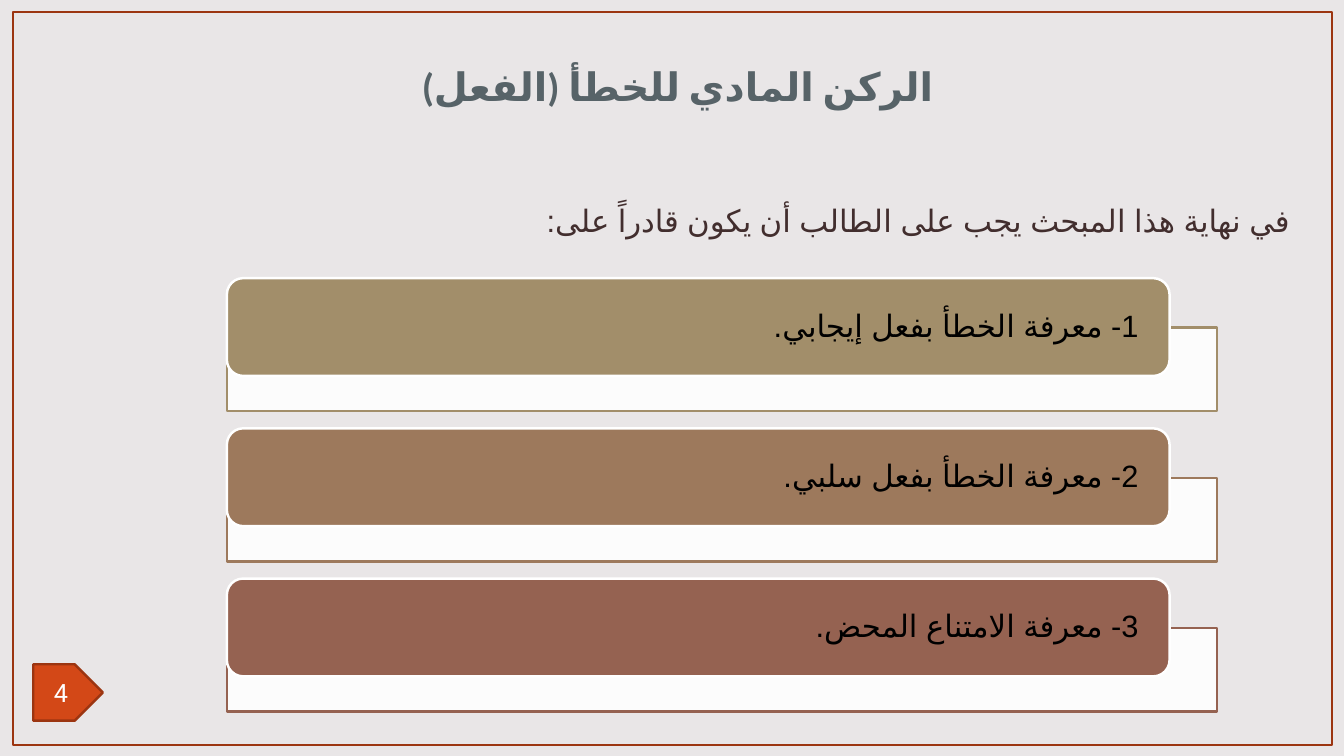
from dataclasses import dataclass

from lxml import etree
from pptx import Presentation
from pptx.dml.color import RGBColor
from pptx.enum.shapes import MSO_SHAPE
from pptx.enum.text import MSO_ANCHOR, MSO_AUTO_SIZE, PP_ALIGN
from pptx.oxml.ns import qn
from pptx.util import Inches, Pt

RECT = MSO_SHAPE.RECTANGLE
ROUNDED = MSO_SHAPE.ROUNDED_RECTANGLE
PENTAGON = MSO_SHAPE.PENTAGON
CENTER, RIGHT, JUSTIFY = PP_ALIGN.CENTER, PP_ALIGN.RIGHT, PP_ALIGN.JUSTIFY
TOP, MIDDLE = MSO_ANCHOR.TOP, MSO_ANCHOR.MIDDLE
NO_AUTOFIT = MSO_AUTO_SIZE.NONE
TITLE_ONLY = 5


@dataclass(frozen=True)
class Theme:
    background: str = "E9E6E7"
    frame: str = "9C3511"
    tag: str = "D34817"
    white: str = "FFFFFF"
    black: str = "000000"
    title: str = "576368"
    intro: str = "422E2E"
    goals: tuple = ("A28E6A", "9D795C", "956251")
    title_size: int = 28
    text_size: int = 22
    tag_size: int = 18
    line: float = 1.75
    title_font: str = "Calibri"
    text_font: str = "Arial"
    tag_font: str = "Roboto"


THEME = Theme()
GOALS = (
    "1- معرفة الخطأ بفعل إيجابي.",
    "2- معرفة الخطأ بفعل سلبي.",
    "3- معرفة الامتناع المحض.",
)


def add_box(slide, kind, box, line, fill=None):
    shape = slide.shapes.add_shape(kind, *map(Inches, box))
    shape.shadow.inherit = False
    if fill:
        shape.fill.solid()
        shape.fill.fore_color.rgb = RGBColor.from_string(fill)
    else:
        shape.fill.background()
    shape.line.color.rgb = RGBColor.from_string(line)
    shape.line.width = Pt(THEME.line)
    return shape


def write(shape, text, font, size, color, align, anchor=MIDDLE, spacing=1.0,
          bold=False, rtl=True, hanging=False):
    """Put one formatted paragraph into a shape, in Latin and Arabic fonts alike."""
    frame = shape.text_frame
    frame.text = text
    frame.word_wrap = True
    frame.auto_size = NO_AUTOFIT
    frame.vertical_anchor = anchor
    paragraph = frame.paragraphs[0]
    paragraph.alignment = align
    paragraph.line_spacing = spacing
    properties = paragraph._p.get_or_add_pPr()
    if rtl:
        properties.set("rtl", "1")
    if hanging:
        properties.set("marL", str(Inches(0.33)))
        properties.set("indent", str(Inches(-0.33)))
    run = paragraph.runs[0]
    formats = {"name": font, "size": Pt(size), "bold": bold}
    for attribute, value in formats.items():
        setattr(run.font, attribute, value)
    run.font.color.rgb = RGBColor.from_string(color)
    run_properties = run._r.get_or_add_rPr()
    if rtl:
        run_properties.set("lang", "ar-SA")
    etree.SubElement(run_properties, qn("a:cs")).set("typeface", font)


def add_backdrop(slide, box):
    slide.background.fill.solid()
    slide.background.fill.fore_color.rgb = RGBColor.from_string(THEME.background)
    add_box(slide, RECT, box, THEME.frame)


def add_page_tag(slide, box, number):
    tag = add_box(slide, PENTAGON, box, THEME.frame, THEME.tag)
    write(tag, number, THEME.tag_font, THEME.tag_size, THEME.white, CENTER, rtl=False)


def add_title(slide, box, text):
    title = slide.shapes.title
    title.left, title.top, title.width, title.height = map(Inches, box)
    write(title, text, THEME.title_font, THEME.title_size, THEME.title, CENTER,
          spacing=1.1, bold=True, hanging=True)


def add_intro(slide, box, text):
    intro = slide.shapes.add_textbox(*map(Inches, box))
    write(intro, text, THEME.text_font, THEME.text_size, THEME.intro, JUSTIFY,
          anchor=TOP, spacing=1.5, hanging=True)


def add_goal(slide, box, text, color):
    """Draw a coloured label overlapping a translucent white panel."""
    left, top, width, height = box
    panel_top = 0.49
    panel = add_box(slide, RECT, (left, top + panel_top, width, height - panel_top),
                    color, THEME.white)
    tint = panel.fill._xPr.find(qn("a:solidFill")).find(qn("a:srgbClr"))
    etree.SubElement(tint, qn("a:alpha")).set("val", "90000")

    label = add_box(slide, ROUNDED, (left, top, width - 0.47, 0.97),
                    THEME.white, color)
    frame = label.text_frame
    frame.margin_left = frame.margin_right = Inches(0.26)
    frame.margin_top = frame.margin_bottom = 0
    write(label, text, THEME.text_font, THEME.text_size, THEME.black, RIGHT,
          spacing=0.9)


def add_goals(slide, box):
    left, top, width, height = box
    gap = 0.17
    goal_height = (height - gap * (len(GOALS) - 1)) / len(GOALS)
    for index, (text, color) in enumerate(zip(GOALS, THEME.goals)):
        goal_top = top + index * (goal_height + gap)
        add_goal(slide, (left, goal_top, width, goal_height), text, color)


def main():
    deck = Presentation()
    deck.slide_width, deck.slide_height = Inches(13.33), Inches(7.5)
    slide = deck.slides.add_slide(deck.slide_layouts[TITLE_ONLY])
    add_backdrop(slide, (0.13, 0.12, 13.08, 7.27))
    add_page_tag(slide, (0.33, 6.59, 0.69, 0.56), "4")
    add_title(slide, (2.96, 0.31, 7.52, 1.03), "الركن المادي للخطأ (الفعل)")
    add_intro(slide, (0.61, 1.77, 12.28, 0.8),
              "في نهاية هذا المبحث يجب على الطالب أن يكون قادراً على:")
    add_goals(slide, (2.25, 2.76, 9.82, 4.3))
    deck.save("out.pptx")


if __name__ == "__main__":
    main()
